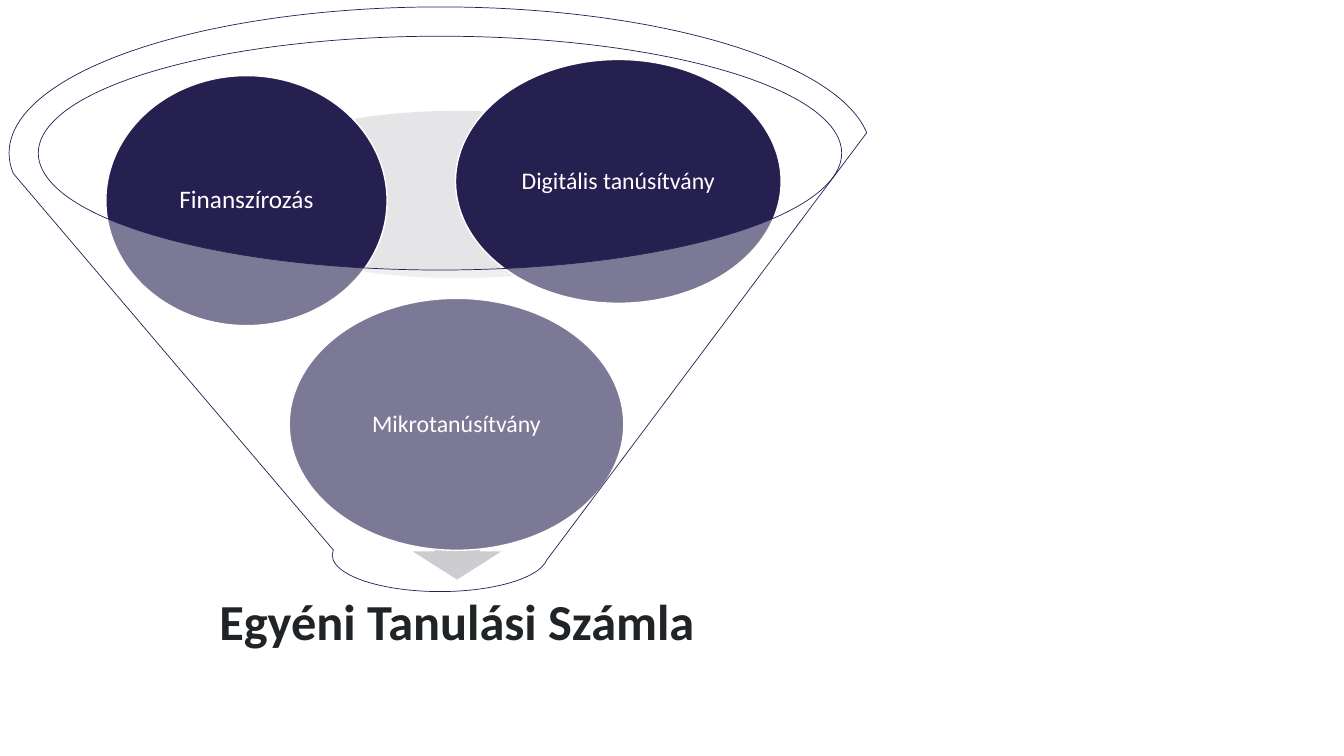
import pptx
import pptx.util
import pptx.dml.color
import pptx.enum.shapes
import pptx.enum.text
import lxml.etree

Pt = pptx.util.Pt
RGBColor = pptx.dml.color.RGBColor
SHAPE = pptx.enum.shapes.MSO_SHAPE
NAVY = RGBColor(0x26, 0x20, 0x50)
WHITE = RGBColor(0xFF, 0xFF, 0xFF)
PALE_GREY = RGBColor(0xBE, 0xBD, 0xC2)
ARROW_GREY = RGBColor(0xAD, 0xAC, 0xB3)
INK = RGBColor(0x20, 0x24, 0x26)

RESULT = ("Egyéni Tanulási Számla", (76.3, 406.1, 500.4, 79.9))
INGREDIENTS = [
    ("Finanszírozás", (75.6, 54, 200.9, 178.6), 18, 2.2),
    ("Mikrotanúsítvány", (206.6, 213.1, 239, 180), 17, 1.4),
    ("Digitális tanúsítvány", (325.4, 42.5, 232.6, 174.2), 17, 1.4),
]
FUNNEL_MOUTH = (154.1, 79.2, 344.2, 119.5)
OUTLET_ARROW = (293, 372.2, 67, 42.5)
FUNNEL = (6.5, 5, 615.6, 417.6)


def write(frame, text, size, color, inset, bold=False):
    frame.word_wrap = True
    frame.auto_size = pptx.enum.text.MSO_AUTO_SIZE.NONE
    frame.vertical_anchor = pptx.enum.text.MSO_ANCHOR.MIDDLE
    frame.margin_left = frame.margin_right = Pt(inset)
    frame.margin_top = frame.margin_bottom = Pt(inset)
    paragraph = frame.paragraphs[0]
    paragraph.alignment = pptx.enum.text.PP_ALIGN.CENTER
    paragraph.line_spacing = 0.9
    run = paragraph.add_run()
    run.text = text
    run.font.name = "Calibri"
    run.font.size = Pt(size)
    run.font.bold = bold
    run.font.color.rgb = color


def draw(slide, kind, box, fill, line=None, weight=1, opacity=100):
    shape = slide.shapes.add_shape(kind, *map(Pt, box))
    shape.shadow.inherit = False
    shape.fill.solid()
    shape.fill.fore_color.rgb = fill
    if opacity < 100:
        tag = pptx.oxml.ns.qn("a:srgbClr")
        color = next(shape.fill._xPr.iter(tag))
        lxml.etree.SubElement(color, pptx.oxml.ns.qn("a:alpha"), val=str(opacity * 1000))
    if line is None:
        shape.line.fill.background()
    else:
        shape.line.color.rgb = line
        shape.line.width = Pt(weight)
    return shape


def main():
    deck = pptx.Presentation()
    deck.slide_width, deck.slide_height = Pt(960), Pt(540)
    slide = deck.slides.add_slide(deck.slide_layouts[5])

    draw(slide, SHAPE.OVAL, FUNNEL_MOUTH, PALE_GREY, opacity=40)
    draw(slide, SHAPE.DOWN_ARROW, OUTLET_ARROW, ARROW_GREY, WHITE)

    result = slide.shapes.title
    text, box = RESULT
    result.left, result.top, result.width, result.height = map(Pt, box)
    write(result.text_frame, text, 36, INK, 20, bold=True)

    for name, box, size, inset in INGREDIENTS:
        ingredient = draw(slide, SHAPE.OVAL, box, NAVY, WHITE)
        write(ingredient.text_frame, name, size, WHITE, inset)

    draw(slide, SHAPE.FUNNEL, FUNNEL, WHITE, NAVY, weight=0.5, opacity=40)
    deck.save("out.pptx")


if __name__ == "__main__":
    main()
